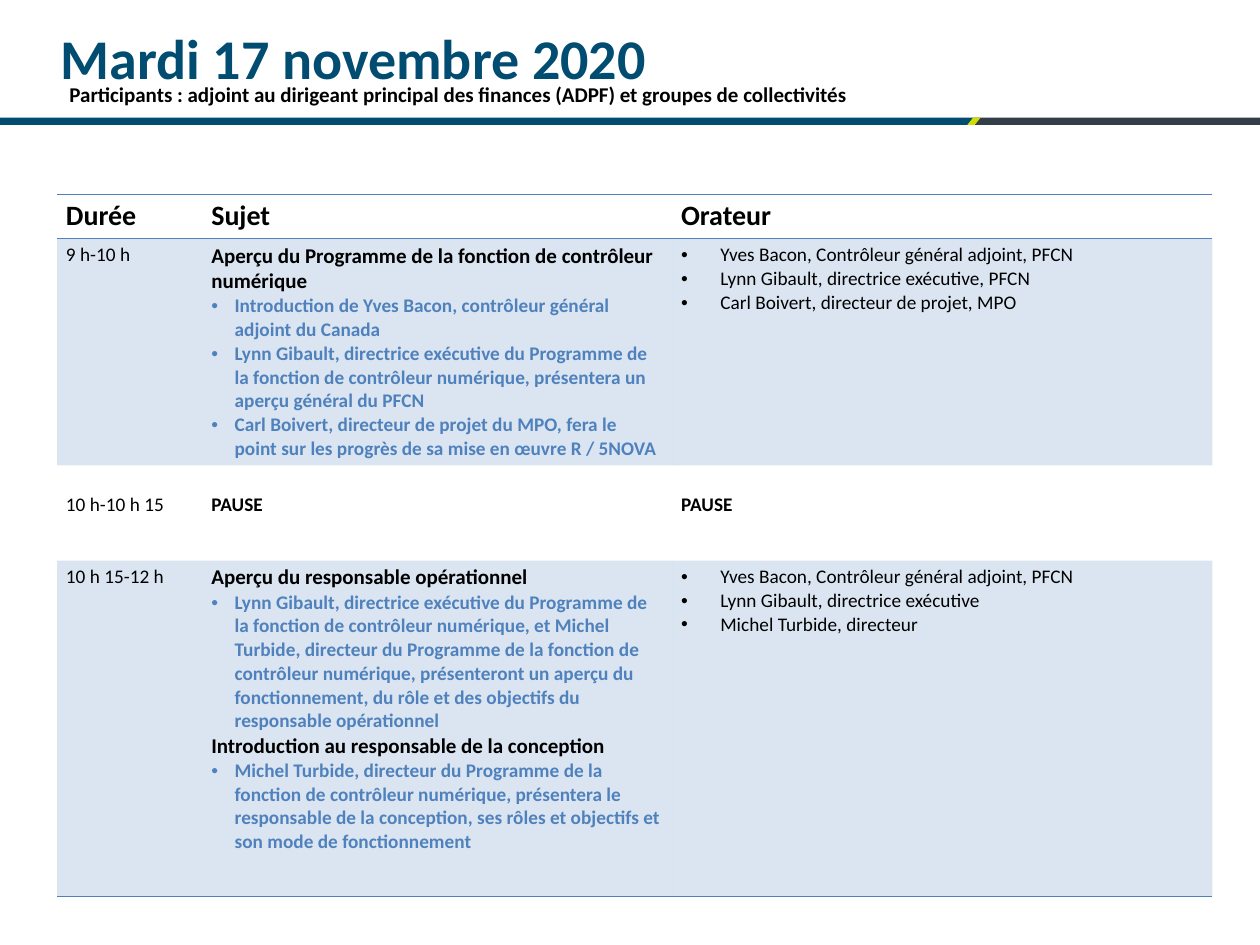
from lxml import etree
from pptx import Presentation, util as u
from pptx.dml.color import RGBColor
from pptx.enum import shapes, text
from pptx.oxml.ns import qn

COLOURS = {"navy": "004D71", "slate": "333E48", "lime": "CFDE00",
           "blue": "4F81BD", "black": "000000"}
PLAIN_TABLE = "{2D5ABB26-0587-4C30-8999-92F81FD0307C}"

# Paragraph kinds: size, colour, bold, bullet indent in cm
KINDS = {"header": (16, "black", True, 0),
         "time": (11, "black", False, 0),
         "topic": (12, "black", True, 0),
         "detail": (11, "blue", True, 0.47),
         "speaker": (11, "black", False, 0.79),
         "pause": (11, "black", True, 0)}


class AgendaSlide:
    font_name = "Calibri"

    def __init__(self, presentation):
        self.slide = presentation.slides.add_slide(presentation.slide_layouts[6])

    def colour(self, name):
        return RGBColor.from_string(COLOURS[name])

    def fill_paragraph(self, paragraph, content, size, colour, bold, indent=0):
        paragraph.text = content
        if indent:
            properties = paragraph._p.get_or_add_pPr()
            properties.set("marL", str(u.Cm(indent)))
            properties.set("indent", str(-u.Cm(indent)))
            etree.SubElement(properties, qn("a:buFont")).set("typeface", "Arial")
            etree.SubElement(properties, qn("a:buChar")).set("char", "•")
        for run in paragraph.runs:
            run.font.name = self.font_name
            run.font.size = u.Pt(size)
            run.font.bold = bold
            run.font.color.rgb = self.colour(colour)

    def band(self, kind, left, top, width, height, colour):
        shape = self.slide.shapes.add_shape(
            kind, u.Cm(left), u.Cm(top), u.Cm(width), u.Cm(height))
        shape.shadow.inherit = False
        shape.fill.solid()
        shape.fill.fore_color.rgb = self.colour(colour)
        shape.line.fill.background()
        return shape

    def text_box(self, left, top, width, height, content, size, colour):
        shape = self.slide.shapes.add_textbox(
            u.Cm(left), u.Cm(top), u.Cm(width), u.Cm(height))
        frame = shape.text_frame
        frame.word_wrap = True
        self.fill_paragraph(frame.paragraphs[0], content, size, colour, True)
        return frame

    def table(self, left, top, widths, heights, rows):
        table = self.slide.shapes.add_table(
            len(rows), len(widths), u.Cm(left), u.Cm(top),
            u.Cm(sum(widths)), u.Cm(sum(heights))).table
        table._tbl.tblPr.find(qn("a:tableStyleId")).text = PLAIN_TABLE
        for column, width in zip(table.columns, widths):
            column.width = u.Cm(width)
        for row, height in zip(table.rows, heights):
            row.height = u.Cm(height)
        for row_index, row in enumerate(rows):
            for column_index, lines in enumerate(row):
                self.cell(table.cell(row_index, column_index), lines)
        return table

    def cell(self, cell, lines):
        cell.margin_left = cell.margin_right = u.Cm(0.18)
        cell.margin_top = cell.margin_bottom = u.Cm(0.09)
        frame = cell.text_frame
        for index, (kind, content) in enumerate(lines):
            paragraph = frame.add_paragraph() if index else frame.paragraphs[0]
            self.fill_paragraph(paragraph, content, *KINDS[kind])

    def rule(self, cell, side):
        line = etree.SubElement(cell._tc.get_or_add_tcPr(), qn("a:" + side),
                                w=str(u.Pt(1)))
        fill = etree.SubElement(line, qn("a:solidFill"))
        etree.SubElement(fill, qn("a:srgbClr")).set("val", COLOURS["blue"])

    def tint(self, cell):
        cell.fill.solid()
        cell.fill.fore_color.rgb = self.colour("blue")
        colour = cell._tc.tcPr.find(qn("a:solidFill")).find(qn("a:srgbClr"))
        etree.SubElement(colour, qn("a:alpha")).set("val", "20000")


def speakers(*names):
    return [("speaker", name) for name in names]


ROWS = [
    [[("header", "Durée")], [("header", "Sujet")], [("header", "Orateur")]],
    [[("time", "9 h-10 h")],
     [("topic", "Aperçu du Programme de la fonction de contrôleur numérique"),
      ("detail", "Introduction de Yves Bacon, contrôleur général adjoint du Canada"),
      ("detail", "Lynn Gibault, directrice exécutive du Programme de la fonction de "
                 "contrôleur numérique, présentera un aperçu général du PFCN"),
      ("detail", "Carl Boivert, directeur de projet du MPO, fera le point sur les "
                 "progrès de sa mise en œuvre R / 5NOVA")],
     speakers("Yves Bacon, Contrôleur général adjoint, PFCN",
              "Lynn Gibault, directrice exécutive, PFCN",
              "Carl Boivert, directeur de projet, MPO")],
    [[("time", "10 h-10 h 15")], [("pause", "PAUSE")], [("pause", "PAUSE")]],
    [[("time", "10 h 15-12 h")],
     [("topic", "Aperçu du responsable opérationnel"),
      ("detail", "Lynn Gibault, directrice exécutive du Programme de la fonction de "
                 "contrôleur numérique, et Michel Turbide, directeur du Programme de "
                 "la fonction de contrôleur numérique, présenteront un aperçu du "
                 "fonctionnement, du rôle et des objectifs du responsable opérationnel"),
      ("topic", "Introduction au responsable de la conception"),
      ("detail", "Michel Turbide, directeur du Programme de la fonction de contrôleur "
                 "numérique, présentera le responsable de la conception, ses rôles et "
                 "objectifs et son mode de fonctionnement")],
     speakers("Yves Bacon, Contrôleur général adjoint, PFCN",
              "Lynn Gibault, directrice exécutive",
              "Michel Turbide, directeur")],
]


def main():
    presentation = Presentation()
    presentation.slide_width, presentation.slide_height = u.Cm(25.4), u.Cm(19.05)
    agenda = AgendaSlide(presentation)

    # Divider under the heading
    kinds = shapes.MSO_SHAPE
    agenda.band(kinds.RECTANGLE, 0, 2.37, 19.6, 0.15, "navy")
    agenda.band(kinds.RECTANGLE, 19.6, 2.37, 5.8, 0.15, "slate")
    slash = agenda.band(kinds.PARALLELOGRAM, 19.5, 2.37, 0.27, 0.15, "lime")
    slash.adjustments[0] = 0.8

    # Title
    title = agenda.text_box(0.97, 0.53, 23.29, 1.35,
                            "Mardi 17 novembre 2020", 32, "navy")
    title.vertical_anchor = text.MSO_ANCHOR.BOTTOM
    title.margin_top, title.margin_bottom = 0, u.Cm(0.05)

    # Agenda table
    table = agenda.table(1.15, 3.92, [2.93, 9.47, 10.89],
                         [0.89, 4.57, 1.92, 6.77], ROWS)
    for column in range(3):
        header, first, pause, last = (table.cell(row, column) for row in range(4))
        agenda.rule(header, "lnT")
        agenda.rule(header, "lnB")
        agenda.rule(last, "lnB")
        agenda.tint(first)
        agenda.tint(last)
        pause.margin_top = u.Cm(0.56)

    # Participants
    agenda.text_box(1.15, 1.52, 16.56, 0.77,
                    "Participants : adjoint au dirigeant principal des finances "
                    "(ADPF) et groupes de collectivités", 12, "black")
    presentation.save("out.pptx")


if __name__ == "__main__":
    main()
